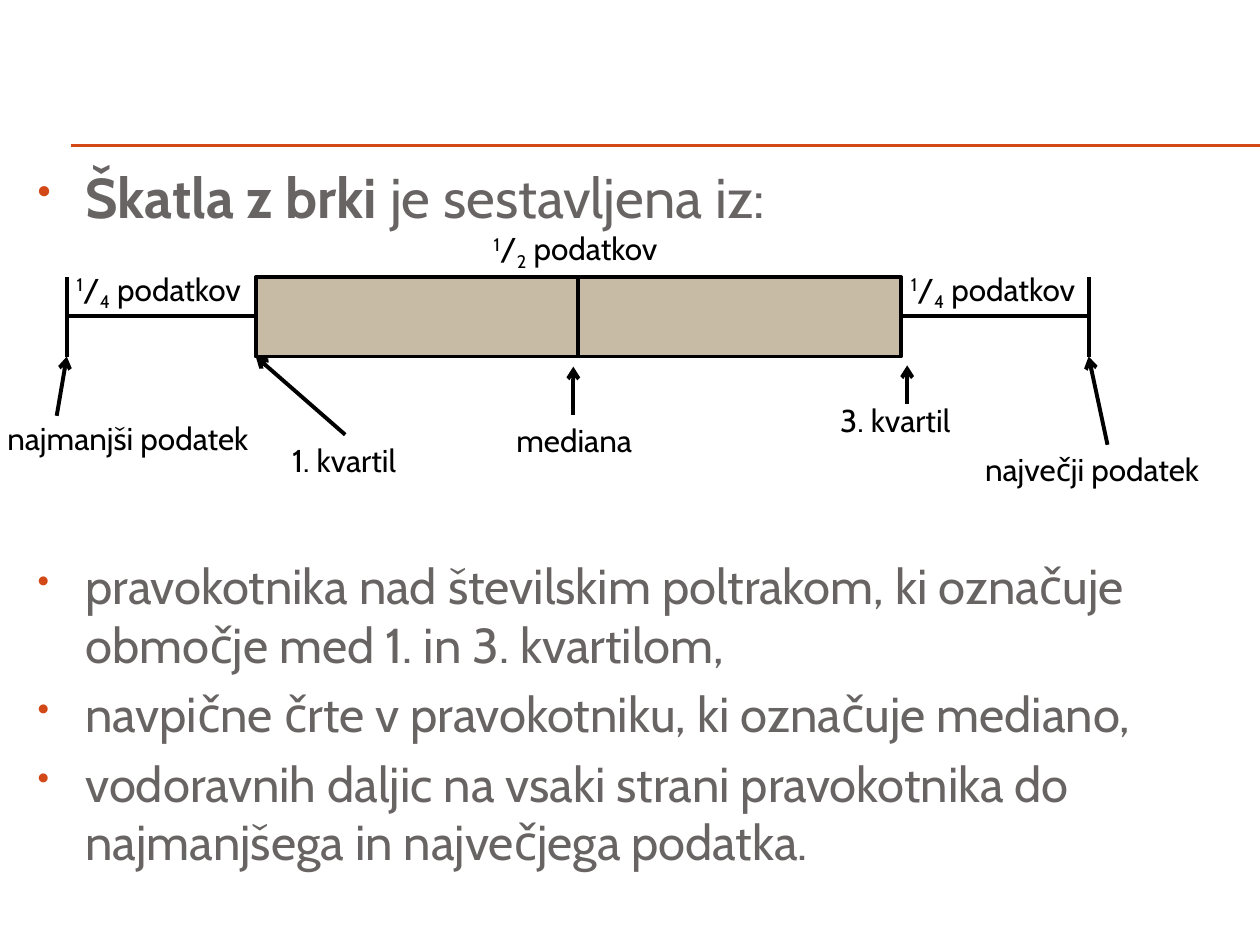
from lxml import etree
from pptx import Presentation
from pptx import util as u
from pptx.dml.color import RGBColor
from pptx.enum import shapes, text
from pptx.oxml.ns import qn

COLORS = {"ink": "000000", "body": "696464", "accent": "D34817", "box": "C7BBA6"}
FONT = "Cabin"


def add_span(para, words, size=18, color="ink", bold=False, baseline=0):
    """Add formatted text to a paragraph."""
    span = para.add_run()
    span.text = words
    span.font.name = FONT
    span.font.size = u.Pt(size)
    span.font.bold = bold
    span.font.color.rgb = RGBColor.from_string(COLORS[color])
    if baseline:
        span._r.get_or_add_rPr().set("baseline", str(baseline * 1000))


class BoxPlotPage:
    """Hold the line style and the current slide, and draw its elements."""

    def __init__(self, page, width=2.25):
        self.page = page
        self.width = width

    def style_line(self, line, color="ink", width=None):
        line.color.rgb = RGBColor.from_string(COLORS[color])
        line.width = u.Pt(width or self.width)

    def line(self, start, end, color="ink", width=None, arrow=False):
        points = [u.Inches(value) for value in (*start, *end)]
        connector = self.page.shapes.add_connector(shapes.MSO_CONNECTOR.STRAIGHT, *points)
        self.style_line(connector.line, color, width)
        properties = connector._element.spPr
        if arrow:
            etree.SubElement(properties.find(qn("a:ln")), qn("a:tailEnd"), type="arrow")
        etree.SubElement(properties, qn("a:effectLst"))

    def process(self, left, top, width, height):
        box = self.page.shapes.add_shape(
            shapes.MSO_SHAPE.FLOWCHART_PROCESS, *map(u.Inches, (left, top, width, height)))
        box.shadow.inherit = False
        box.fill.solid()
        box.fill.fore_color.rgb = RGBColor.from_string(COLORS["box"])
        self.style_line(box.line)

    def text_frame(self, left, top, width, height, wrap):
        box = self.page.shapes.add_textbox(*map(u.Inches, (left, top, width, height)))
        frame = box.text_frame
        frame.word_wrap = wrap
        frame.auto_size = text.MSO_AUTO_SIZE.NONE if wrap else text.MSO_AUTO_SIZE.SHAPE_TO_FIT_TEXT
        return frame

    def label(self, words, left, top, width):
        frame = self.text_frame(left, top, width, 0.4, wrap=False)
        add_span(frame.paragraphs[0], words)

    def share(self, denominator, left, top):
        para = self.text_frame(left, top, 1.55, 0.4, wrap=False).paragraphs[0]
        for words, baseline in (("1", 30), ("/", 0), (denominator, -25), (" podatkov", 0)):
            add_span(para, words, baseline=baseline)

    def bullets(self, top, height, items, size):
        frame = self.text_frame(0.2, top, 9.5, height, wrap=True)
        for index, spans in enumerate(items):
            para = frame.add_paragraph() if index else frame.paragraphs[0]
            para.space_after = u.Pt(6)
            properties = para._p.get_or_add_pPr()
            properties.set("marL", str(u.Inches(0.38)))
            properties.set("indent", str(u.Inches(-0.38)))
            color = etree.SubElement(properties, qn("a:buClr"))
            etree.SubElement(color, qn("a:srgbClr"), val=COLORS["accent"])
            etree.SubElement(properties, qn("a:buSzPct"), val="70000")
            etree.SubElement(properties, qn("a:buChar"), char="•")
            for words, bold in spans:
                add_span(para, words, size=size, color="body", bold=bold)


def main():
    deck = Presentation()
    deck.slide_width, deck.slide_height = u.Inches(10), u.Inches(7.5)
    plot = BoxPlotPage(deck.slides.add_slide(deck.slide_layouts[6]))

    for y in (1.15, 1.16):
        plot.line((0.56, y), (10, y), "accent", 0.75)
    plot.bullets(1.24, 0.7, [[("Škatla z brki ", True), ("je sestavljena iz:", False)]], 32)
    plot.bullets(4.36, 2.67, [
        [("pravokotnika nad številskim poltrakom, ki označuje območje med 1. in 3. kvartilom,", False)],
        [("navpične črte v pravokotniku, ki označuje mediano,", False)],
        [("vodoravnih daljic na vsaki strani pravokotnika do najmanjšega in največjega podatka.", False)],
    ], 28)

    minimum, lower, median, upper, maximum = 0.53, 2.03, 4.59, 7.15, 8.64
    top, middle, bottom = 2.2, 2.51, 2.83
    plot.process(lower, top, upper - lower, bottom - top)
    for start, end in ((lower, minimum), (maximum, upper)):
        plot.line((start, middle), (end, middle))
    for x in (minimum, median, maximum):
        plot.line((x, top), (x, bottom))

    for words, left, label_top, width, start, end in (
        ("najmanjši podatek", -0.04, 3.28, 2.2, (0.45, 3.3), (minimum, bottom)),
        ("1. kvartil", 2.22, 3.45, 1.13, (2.74, 3.45), (lower, bottom)),
        ("mediana", 4, 3.29, 1.14, (4.55, 3.29), (4.55, 2.91)),
        ("3. kvartil", 6.57, 3.13, 1.13, (7.2, 3.21), (7.2, 2.9)),
        ("največji podatek", 7.72, 3.52, 1.93, (8.79, 3.53), (maximum, bottom)),
    ):
        plot.label(words, left, label_top, width)
        plot.line(start, end, arrow=True)

    for denominator, left, share_top in (("4", 0.51, 2.09), ("4", 7.13, 2.09), ("2", 3.82, 1.77)):
        plot.share(denominator, left, share_top)
    deck.save("out.pptx")


if __name__ == "__main__":
    main()
